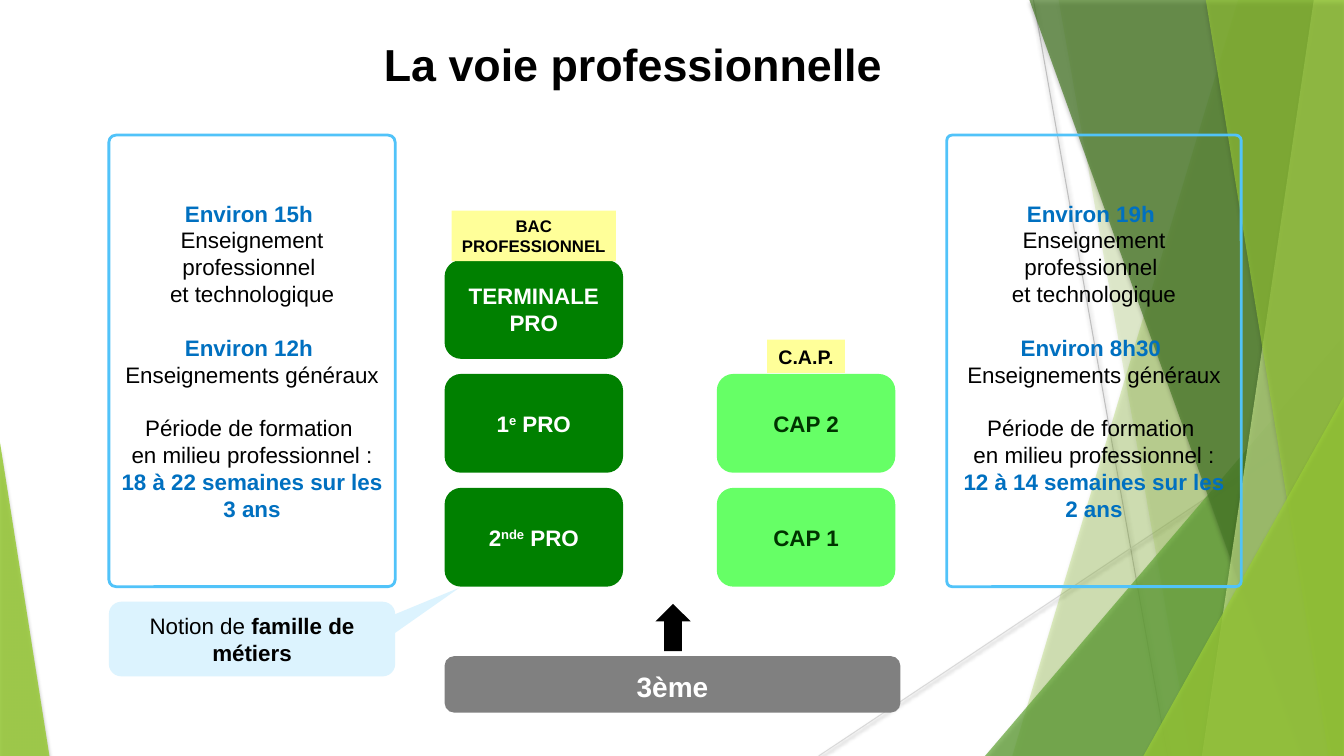
from lxml import etree
from pptx import Presentation
from pptx.dml.color import RGBColor
from pptx.enum.shapes import MSO_CONNECTOR as LINK, MSO_SHAPE as SHAPE
from pptx.enum.text import MSO_ANCHOR as ANCHOR, PP_ALIGN as ALIGN
from pptx.oxml.ns import qn
from pptx.util import Pt

PX = 9144  # 100 px to the inch
WIDE, HIGH = 1333, 750
FONT = "Arial"

BLACK = RGBColor(0x00, 0x00, 0x00)
WHITE = RGBColor(0xFF, 0xFF, 0xFF)
GREY = RGBColor(0x80, 0x80, 0x80)
SILVER = RGBColor(0xBF, 0xBF, 0xBF)
PALE = RGBColor(0xD9, 0xD9, 0xD9)
BLUE = RGBColor(0x00, 0x70, 0xC0)
SKY = RGBColor(0x51, 0xC3, 0xF9)
ICE = RGBColor(0xDC, 0xF3, 0xFE)
GREEN = RGBColor(0x00, 0x80, 0x00)
LIGHT = RGBColor(0x66, 0xFF, 0x66)
DARK = RGBColor(0x00, 0x33, 0x00)
YELLOW = RGBColor(0xFF, 0xFF, 0x99)
LIME = RGBColor(0x99, 0xCB, 0x38)
LEAF = RGBColor(0x63, 0xA5, 0x37)
MOSS = RGBColor(0x4A, 0x7C, 0x29)
SOFT = RGBColor(0xC2, 0xE0, 0x88)

RAYS = [((1025, 0), (1158, 750), SILVER), ((1333, 403), (812, 750), PALE)]
# Corner points, colour and opacity in percent, from back to front
FACETS = [
    ([(1228, 0), (1333, 0), (1333, 750), (1004, 750)], LIME, 30),
    ([(1050, 0), (1333, 0), (1333, 750), (1182, 750)], LIME, 20),
    ([(1333, 333), (1333, 750), (977, 750)], LEAF, 72),
    ([(1021, 0), (1333, 0), (1333, 750), (1291, 750)], MOSS, 70),
    ([(1303, 0), (1333, 0), (1333, 750), (1192, 750)], SOFT, 70),
    ([(1196, 0), (1333, 0), (1333, 750), (1318, 750)], LIME, 65),
    ([(1333, 393), (1333, 750), (1134, 750)], LIME, 80),
    ([(0, 439), (49, 750), (0, 750)], LIME, 85),
]

BASE, STEP = 484, 113  # top of the lowest stage, rise to the next
TRACKS = [
    (441, GREEN, WHITE, [[[("2", {}), ("nde", {"sup": True}), (" PRO", {})]],
                         [[("1", {}), ("e", {"sup": True}), (" PRO", {})]],
                         ["TERMINALE", "PRO"]]),
    (711, LIGHT, DARK, [["CAP 1"], ["CAP 2"]]),
]


def shade(shape, alpha, blur, dist):
    """Give the shape a soft shadow that falls downwards."""
    props = shape._element.spPr
    for old in props.findall(qn("a:effectLst")):
        props.remove(old)
    effect = etree.SubElement(props, qn("a:effectLst"))
    outer = etree.SubElement(effect, qn("a:outerShdw"), blurRad=str(Pt(blur)),
                             dist=str(Pt(dist)), dir="5400000",
                             algn="ctr", rotWithShape="0")
    tone = etree.SubElement(outer, qn("a:srgbClr"), val="000000")
    etree.SubElement(tone, qn("a:alpha"), val=str(alpha * 1000))


def add_ray(slide, start, end, color):
    ends = [v * PX for v in start + end]
    ray = slide.shapes.add_connector(LINK.STRAIGHT, *ends)
    ray.line.color.rgb = color
    ray.line.width = Pt(0.75)
    shade(ray, 38, 3, 1.5)


def add_facet(slide, points, color, alpha):
    pen = slide.shapes.build_freeform(*points[0], scale=PX)
    pen.add_line_segments(points[1:], close=True)
    facet = pen.convert_to_shape()
    facet.fill.solid()
    facet.fill.fore_color.rgb = color
    tone = facet._element.spPr.find(qn("a:solidFill"))[0]
    etree.SubElement(tone, qn("a:alpha"), val=str(alpha * 1000))
    facet.line.fill.background()
    shade(facet, 35, 3, 2)


def add_box(slide, kind, left, top, width, height, fill=None, line=None,
            adjust=()):
    box = slide.shapes.add_shape(
        kind, *[v * PX for v in (left, top, width, height)])
    box.shadow.inherit = False
    for i, value in enumerate(adjust):
        box.adjustments[i] = value
    if fill is None:
        box.fill.background()
    else:
        box.fill.solid()
        box.fill.fore_color.rgb = fill
    if line is None:
        box.line.fill.background()
    else:
        box.line.color.rgb = line
        box.line.width = Pt(2)
    return box


def write(shape, paras, size=16, color=BLACK, bold=False, wrap=True,
          inset=(10, 5), anchor=ANCHOR.MIDDLE, space=None, gaps=()):
    """Fill a shape; a paragraph is a string or a list of (text, format)."""
    frame = shape.text_frame
    frame.word_wrap = wrap
    frame.vertical_anchor = anchor
    frame.margin_left = frame.margin_right = inset[0] * PX
    frame.margin_top = frame.margin_bottom = inset[1] * PX
    for i, runs in enumerate(paras):
        para = frame.add_paragraph() if i else frame.paragraphs[0]
        para.alignment = ALIGN.CENTER
        if space:
            para.line_spacing = space
        if i in gaps:
            para.space_before = Pt(size * 1.2)
        for text, form in [(runs, {})] if isinstance(runs, str) else runs:
            run = para.add_run()
            run.text = text
            font = run.font
            font.name = FONT
            font.size = Pt(size)
            font.bold = form.get("bold", bold)
            font.color.rgb = form.get("color", color)
            if form.get("sup"):
                run._r.get_or_add_rPr().set("baseline", "30000")


def add_hours(slide, left, width, adjust, trade, general, weeks):
    key = {"color": BLUE, "bold": True}
    panel = add_box(slide, SHAPE.ROUNDED_RECTANGLE, left, 134, width, 448,
                    line=SKY, adjust=[adjust])
    write(panel, [[(f"Environ {trade} ", key)],
                  "Enseignement professionnel ",
                  "et technologique",
                  [(f"Environ {general} ", key)],
                  "Enseignements généraux",
                  "Période de formation ",
                  [("en milieu professionnel : ", {}),
                   (f"{weeks} ans", key)]], gaps=(3, 5))


def add_track(slide, left, fill, color, stages):
    for i, paras in enumerate(stages):
        stage = add_box(slide, SHAPE.ROUNDED_RECTANGLE, left,
                        BASE - i * STEP, 177, 98, fill)
        write(stage, paras, color=color, bold=True, wrap=False,
              inset=(12, 6))


def add_award(slide, left, top, width, height, paras, size):
    award = add_box(slide, SHAPE.RECTANGLE, left, top, width, height, YELLOW)
    write(award, paras, size=size, bold=True, inset=(9, 5),
          anchor=ANCHOR.TOP)


def add_title(slide, text):
    title = slide.shapes.title
    title.left, title.top = 28 * PX, 42 * PX
    title.width, title.height = 1200 * PX, 48 * PX
    write(title, [text], size=32, bold=True, inset=(0, 0), space=0.9)


def main():
    deck = Presentation()
    deck.slide_width, deck.slide_height = WIDE * PX, HIGH * PX
    slide = deck.slides.add_slide(deck.slide_layouts[5])
    for ray in RAYS:
        add_ray(slide, *ray)
    for facet in FACETS:
        add_facet(slide, *facet)
    add_title(slide, "La voie professionnelle")

    add_hours(slide, 108, 284, 0.025, "15h", "12h",
              "18 à 22 semaines sur les 3")
    add_hours(slide, 939, 292, 0.018, "19h", "8h30",
              "12 à 14 semaines sur les 2")
    note = add_box(slide, SHAPE.ROUNDED_RECTANGULAR_CALLOUT, 108, 597, 284,
                   74, ICE, adjust=[0.725, -0.69, 0.167])
    write(note, [[("Notion de", {}),
                  (" famille de métiers", {"bold": True})]])

    for track in TRACKS:
        add_track(slide, *track)
    add_award(slide, 448, 209, 163, 50, ["BAC", "PROFESSIONNEL"], 12)
    add_award(slide, 761, 337, 77, 33, ["C.A.P."], 14)

    start = add_box(slide, SHAPE.ROUNDED_RECTANGLE, 441, 651, 452, 56, GREY)
    write(start, ["3ème"], size=20, color=WHITE, bold=True, wrap=False,
          inset=(12, 6), space=1.1)
    add_box(slide, SHAPE.UP_ARROW, 650, 599, 35, 47, BLACK)
    deck.save("out.pptx")


if __name__ == "__main__":
    main()
